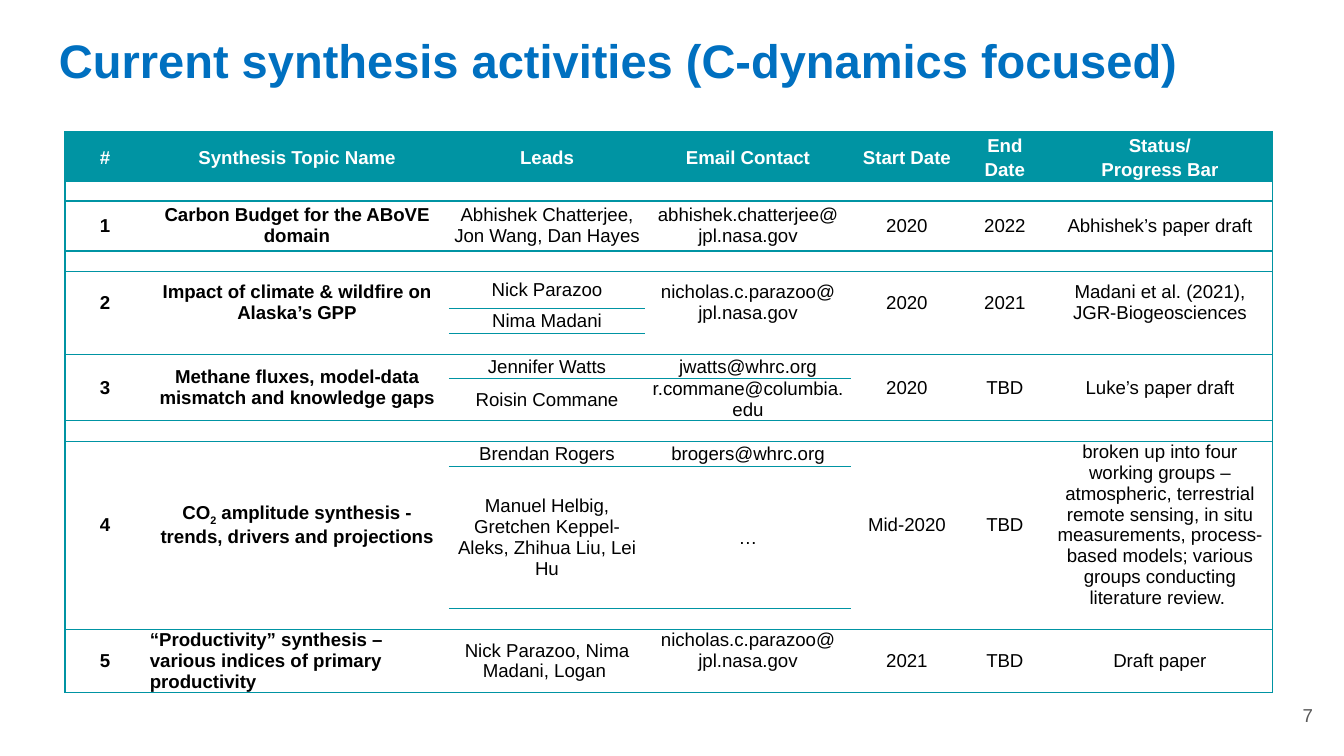
from lxml import etree
from pptx import Presentation
from pptx.dml.color import RGBColor
from pptx.enum.text import MSO_ANCHOR, PP_ALIGN
from pptx.oxml.ns import qn
from pptx.util import Emu, Pt

EMU_PER_PX = 914400 / 134.4
FONT = "Arial"
BLUE = RGBColor(0x00, 0x70, 0xC0)
TEAL = RGBColor(0x00, 0x94, 0xA3)
GRAY = RGBColor(0x59, 0x59, 0x59)
BLACK = RGBColor(0, 0, 0)
WHITE = RGBColor(255, 255, 255)
LEFT, CENTER, RIGHT = PP_ALIGN.LEFT, PP_ALIGN.CENTER, PP_ALIGN.RIGHT
TOP, MIDDLE = MSO_ANCHOR.TOP, MSO_ANCHOR.MIDDLE
TITLE_ONLY = 5

COLUMN_WIDTHS = [80, 304, 196, 206, 112, 84, 226]
ROW_HEIGHTS = [49, 20, 50, 21, 37, 25, 21, 24, 42, 21, 25, 142, 21, 63]

# Line break: new paragraph. Between tildes: subscript.
HEADER = ["#", "Synthesis Topic Name", "Leads", "Email Contact", "Start Date",
          "End Date", "Status/\nProgress Bar"]
ROWS = {
    0: HEADER,
    2: ["1", "Carbon Budget for the ABoVE domain",
        "Abhishek Chatterjee,\nJon Wang, Dan Hayes",
        "abhishek.chatterjee@\njpl.nasa.gov", "2020", "2022",
        "Abhishek’s paper draft"],
    4: ["2", "Impact of climate & wildfire on Alaska’s GPP", "Nick Parazoo",
        "nicholas.c.parazoo@\njpl.nasa.gov", "2020", "2021",
        "Madani et al. (2021), JGR-Biogeosciences"],
    5: ["", "", "Nima Madani", "", "", "", ""],
    7: ["3", "Methane fluxes, model-data mismatch and knowledge gaps",
        "Jennifer Watts", "jwatts@whrc.org", "2020", "TBD",
        "Luke’s paper draft"],
    8: ["", "", "Roisin Commane", "r.commane@columbia.edu", "", "", ""],
    10: ["4", "CO~2~ amplitude synthesis - trends, drivers and projections",
         "Brendan Rogers", "brogers@whrc.org", "Mid-2020", "TBD",
         "broken up into four working groups – atmospheric, terrestrial "
         "remote sensing, in situ measurements, process-based models; "
         "various groups conducting literature review. "],
    11: ["", "", "Manuel Helbig, Gretchen Keppel-Aleks, Zhihua Liu, Lei Hu",
         "…", "", "", ""],
    13: ["5", "“Productivity” synthesis – various indices of primary productivity",
         "Nick Parazoo, Nima Madani, Logan ",
         "nicholas.c.parazoo@\njpl.nasa.gov", "2021", "TBD", "Draft paper"],
}
# First row of each two-row topic, with the columns that stay split
SPLIT_COLUMNS = {4: [2], 7: [2, 3], 10: [2, 3]}
# Columns ruled above each row; rows not named are ruled right across
RULED_COLUMNS = {5: [2], 6: [2], 8: [2, 3], 11: [2, 3], 12: [2, 3]}
ALL_COLUMNS = range(len(COLUMN_WIDTHS))


def px(length):
    return Emu(round(length * EMU_PER_PX))


class SlideBuilder:
    def __init__(self, slide):
        self.slide = slide

    def add_text(self, frame, text, size, color, bold=False, align=LEFT, spacing=1.0):
        for index, line in enumerate(text.split("\n")):
            paragraph = frame.paragraphs[0] if index == 0 else frame.add_paragraph()
            paragraph.alignment = align
            paragraph.line_spacing = spacing
            for part, piece in enumerate(line.split("~")):
                run = paragraph.add_run()
                run.text = piece
                font = run.font
                font.name, font.size, font.bold = FONT, Pt(size), bold
                font.color.rgb = color
                if part % 2:
                    run._r.get_or_add_rPr().set("baseline", "-25000")

    def place(self, shape, left, top, width, height):
        shape.left, shape.top = px(left), px(top)
        shape.width, shape.height = px(width), px(height)
        frame = shape.text_frame
        frame.word_wrap = True
        frame.vertical_anchor = MIDDLE
        frame.margin_left = frame.margin_right = px(13)
        frame.margin_top = frame.margin_bottom = px(13)
        return frame

    def title(self, text, *box):
        frame = self.place(self.slide.shapes.title, *box)
        self.add_text(frame, text, 25.2, BLUE, bold=True)

    def text_box(self, text, *box):
        shape = self.slide.shapes.add_textbox(0, 0, 0, 0)
        self.add_text(self.place(shape, *box), text, 10, GRAY, align=RIGHT)

    def borders(self, cell, sides):
        properties = cell._tc.get_or_add_tcPr()
        for index, side in enumerate("LRTB"):
            line = etree.Element(qn(f"a:ln{side}"), w=str(Pt(0.75)))
            if side in sides:
                fill = etree.SubElement(line, qn("a:solidFill"))
                etree.SubElement(fill, qn("a:srgbClr"), val=str(TEAL))
            else:
                etree.SubElement(line, qn("a:noFill"))
            properties.insert(index, line)

    def cell(self, cell, text, row, column):
        cell.margin_left = cell.margin_right = px(5)
        cell.margin_top = cell.margin_bottom = 0
        cell.vertical_anchor = TOP if (row, column) == (13, 3) else MIDDLE
        header = row == 0
        if header:
            cell.fill.solid()
            cell.fill.fore_color.rgb = TEAL
        else:
            cell.fill.background()
        if text:
            self.add_text(cell.text_frame, text, 10, WHITE if header else BLACK,
                          bold=header or column < 2,
                          align=LEFT if (row, column) == (13, 1) else CENTER,
                          spacing=1.15 if header else 1.0)
        else:
            # Small text size keeps the spacer rows thin
            paragraph = cell.text_frame.paragraphs[0]
            etree.SubElement(paragraph._p, qn("a:endParaRPr"), sz="600")

    def table(self, left, top):
        shape = self.slide.shapes.add_table(
            len(ROW_HEIGHTS), len(COLUMN_WIDTHS), px(left), px(top),
            px(sum(COLUMN_WIDTHS)), px(sum(ROW_HEIGHTS)))
        table = shape.table
        table.first_row = table.horz_banding = False
        for column, width in zip(table.columns, COLUMN_WIDTHS):
            column.width = px(width)
        for row, height in zip(table.rows, ROW_HEIGHTS):
            row.height = px(height)

        # Topics with two leads
        for row, split in SPLIT_COLUMNS.items():
            for column in ALL_COLUMNS:
                if column not in split:
                    table.cell(row, column).merge(table.cell(row + 1, column))

        # Text, fills and rules
        for row in range(len(ROW_HEIGHTS)):
            texts = ROWS.get(row, [""] * len(COLUMN_WIDTHS))
            for column, text in enumerate(texts):
                cell = table.cell(row, column)
                self.cell(cell, text, row, column)
                below = row + (cell.span_height if cell.is_merge_origin else 1)
                sides = "L" if column == 0 else ""
                sides += "R" if column == ALL_COLUMNS[-1] else ""
                sides += "T" if column in RULED_COLUMNS.get(row, ALL_COLUMNS) else ""
                sides += "B" if column in RULED_COLUMNS.get(below, ALL_COLUMNS) else ""
                self.borders(cell, sides)


def main():
    presentation = Presentation()
    presentation.slide_width, presentation.slide_height = px(1344), px(756)
    layout = presentation.slide_layouts[TITLE_ONLY]
    builder = SlideBuilder(presentation.slides.add_slide(layout))

    builder.title("Current synthesis activities (C-dynamics focused)", 46, 17, 1253, 85)
    builder.table(65, 132)
    # Page number
    builder.text_box("7", 1246, 686, 80, 58)
    presentation.save("out.pptx")


if __name__ == "__main__":
    main()
